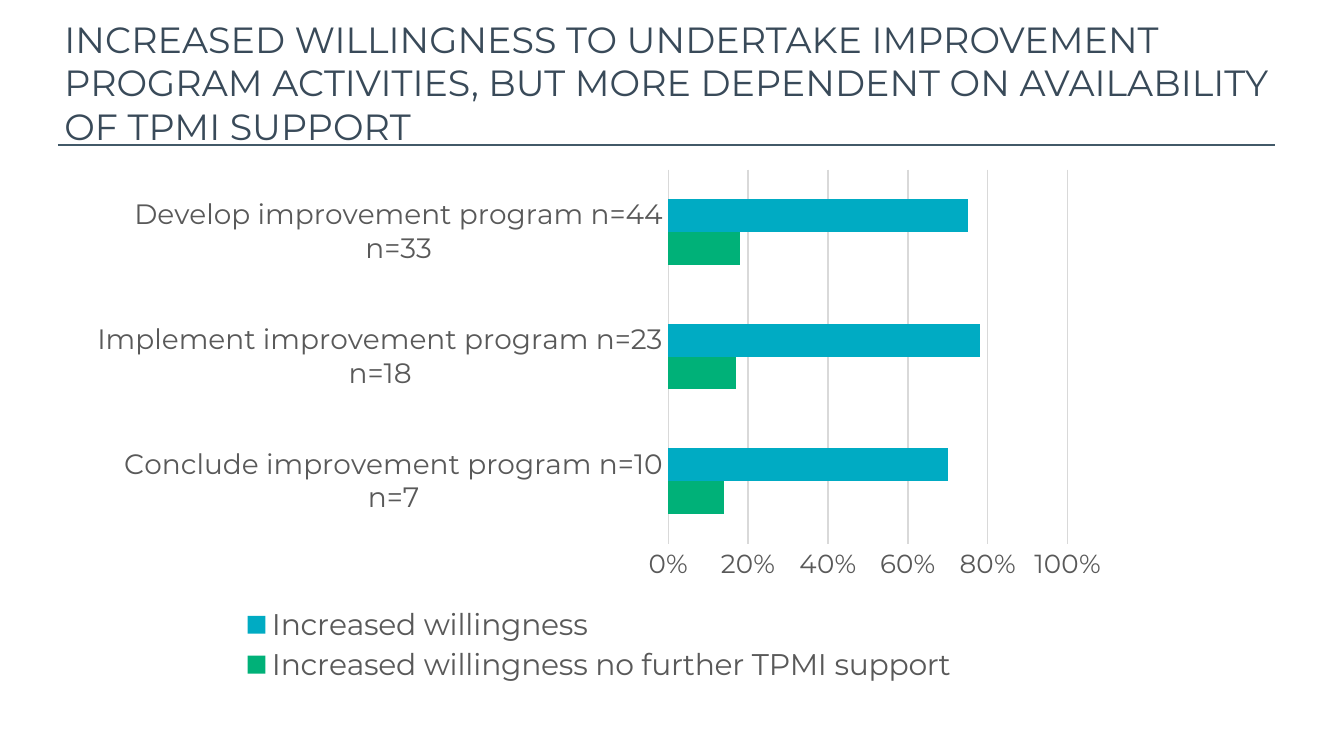
from lxml import etree
from pptx import Presentation
from pptx.chart.data import CategoryChartData
from pptx.dml.color import RGBColor
from pptx.enum.chart import XL_CHART_TYPE as Chart, XL_LEGEND_POSITION as Legend
from pptx.enum.chart import XL_TICK_MARK as Tick
from pptx.enum.shapes import MSO_CONNECTOR as Connector
from pptx.enum.text import MSO_ANCHOR as Anchor
from pptx.oxml import parse_xml
from pptx.oxml.ns import nsdecls, qn
from pptx.util import Inches, Pt

WIDTH = Inches(10)
HEIGHT = WIDTH * 9 // 16
FONT = "Montserrat"
NAVY = RGBColor(0x39, 0x4A, 0x59)
SLATE = RGBColor(0x42, 0x59, 0x68)
GREY = RGBColor(0x59, 0x59, 0x59)
LIGHT = RGBColor(0xD9, 0xD9, 0xD9)
GREEN = RGBColor(0x00, 0xB1, 0x78)
TEAL = RGBColor(0x00, 0xAB, 0xC3)

TITLE = ("INCREASED WILLINGNESS TO UNDERTAKE IMPROVEMENT PROGRAM ACTIVITIES, "
         "BUT MORE DEPENDENT ON AVAILABILITY OF TPMI SUPPORT")
CATEGORIES = [
    "Conclude improvement program n=10\nn=7",
    "Implement improvement program n=23\nn=18",
    "Develop improvement program n=44\nn=33",
]
SERIES = [
    ("Increased willingness no further TPMI support", (0.14, 0.17, 0.18), GREEN),
    ("Increased willingness", (0.7, 0.78, 0.75), TEAL),
]


def box(x, y, w, h):
    """Turn percentages of the slide's size into lengths."""
    return [int(share * full / 100) for share, full in
            zip((x, y, w, h), (WIDTH, HEIGHT, WIDTH, HEIGHT))]


def set_all(obj, values):
    for name, value in values.items():
        setattr(obj, name, value)


def style_font(font, size, color):
    set_all(font, {"name": FONT, "size": Pt(size), "bold": False})
    font.color.rgb = color


def style_line(line, color, width):
    line.color.rgb = color
    line.width = Pt(width)


def add_title(s, text):
    tf = s.shapes.add_textbox(*box(4.8, 2.7, 92.3, 16.4)).text_frame
    set_all(tf, {"word_wrap": True, "vertical_anchor": Anchor.MIDDLE,
                 "margin_left": 0, "margin_right": Inches(0.1),
                 "margin_top": Inches(0.05), "margin_bottom": Inches(0.05)})
    r = tf.paragraphs[0].add_run()
    r.text = text
    style_font(r.font, 19.5, NAVY)


def add_rule(s):
    x, y, w, _ = box(4.3, 19.2, 90.6, 0)
    line = s.shapes.add_connector(Connector.STRAIGHT, x, y, x + w, y)
    style_line(line.line, SLATE, 1)
    etree.SubElement(line._element.spPr, qn("a:effectLst"))


def place(element, x, y, w, h, inner=False):
    """Fix a chart part at percentages of the chart's size."""
    target = '<c:layoutTarget val="inner"/>' if inner else ""
    modes = '<c:xMode val="edge"/><c:yMode val="edge"/>'
    parts = "".join(f'<c:{tag} val="{share / 100}"/>'
                    for tag, share in zip("xywh", (x, y, w, h)))
    for old in element.findall(qn("c:layout")):
        element.remove(old)
    layout = parse_xml(f'<c:layout {nsdecls("c")}><c:manualLayout>{target}'
                       f'{modes}{parts}</c:manualLayout></c:layout>')
    before = element.find(qn("c:legendPos"))
    element.insert(0 if before is None else element.index(before) + 1, layout)


def style_axes(chart):
    cat, val = chart.category_axis, chart.value_axis
    for axis, size in ((cat, 15), (val, 14)):
        set_all(axis, {"major_tick_mark": Tick.NONE, "minor_tick_mark": Tick.NONE})
        style_font(axis.tick_labels.font, size, GREY)
    cat.has_major_gridlines = False
    style_line(cat.format.line, LIGHT, 0.75)
    set_all(val, {"minimum_scale": 0, "maximum_scale": 1, "major_unit": 0.2,
                  "has_major_gridlines": True})
    set_all(val.tick_labels, {"number_format": "0%", "number_format_is_linked": False})
    val.format.line.fill.background()
    style_line(val.major_gridlines.format.line, LIGHT, 0.75)


def add_bar_chart(s):
    data = CategoryChartData(number_format="0%")
    data.categories = CATEGORIES
    for name, values, _ in SERIES:
        data.add_series(name, values)
    chart = s.shapes.add_chart(Chart.BAR_CLUSTERED, *box(5.7, 21.1, 77.8, 70),
                               data).chart
    style_font(chart.font, 10, GREY)
    set_all(chart, {"has_title": False, "has_legend": True})
    set_all(chart.plots[0], {"gap_width": 182, "overlap": 0, "vary_by_categories": False})
    for series, (_, _, color) in zip(chart.plots[0].series, SERIES):
        series.format.fill.solid()
        series.format.fill.fore_color.rgb = color
    style_axes(chart)
    set_all(chart.legend, {"position": Legend.BOTTOM, "include_in_layout": False})
    style_font(chart.legend.font, 16, GREY)
    place(chart.legend._element, 15.5, 83.7, 69, 16)
    place(chart._chartSpace.chart.plotArea, 56.6, 1.9, 38.2, 70.7, inner=True)


def main():
    prs = Presentation()
    set_all(prs, {"slide_width": WIDTH, "slide_height": HEIGHT})
    s = prs.slides.add_slide(prs.slide_layouts[6])
    add_rule(s)
    add_bar_chart(s)
    add_title(s, TITLE)
    prs.save("out.pptx")


if __name__ == "__main__":
    main()
